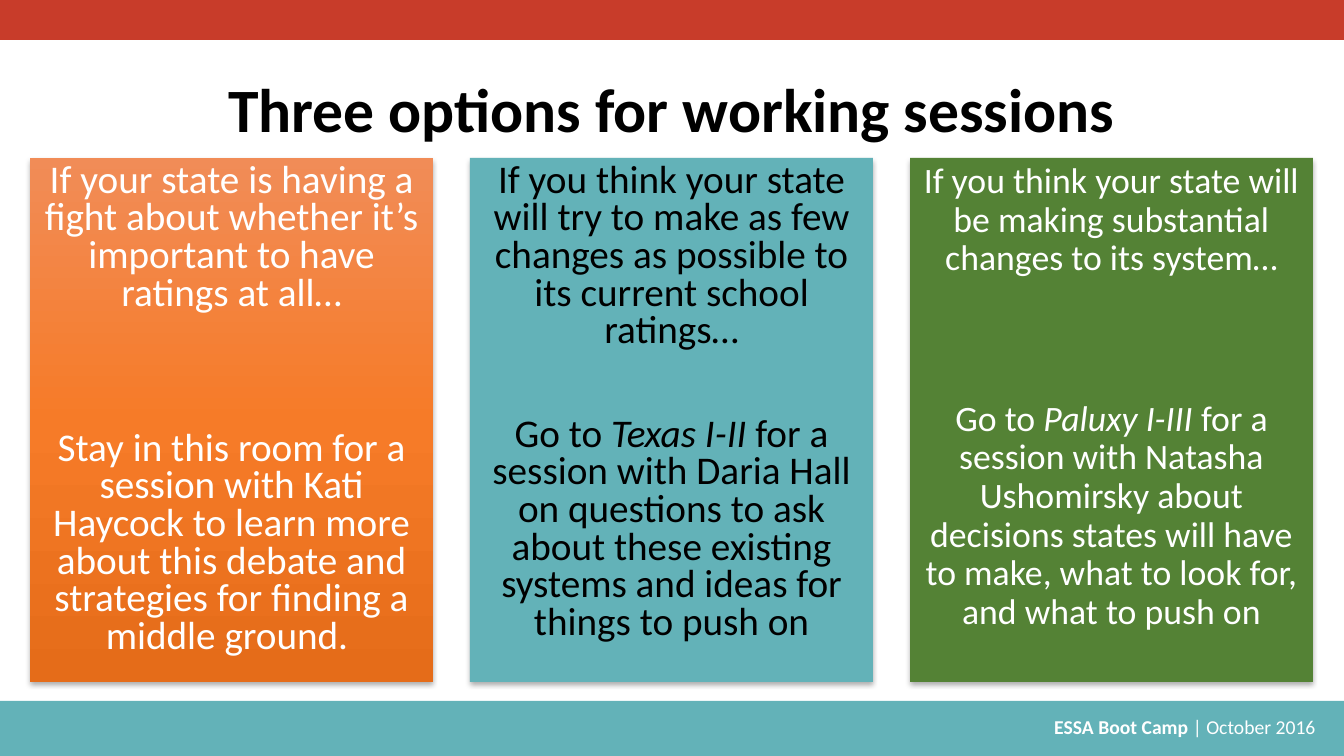
"""Build the slide that offers three options for working sessions."""
from copy import deepcopy

from pptx import Presentation, util as u
from pptx.dml.color import RGBColor
from pptx.enum import shapes, text
from pptx.oxml import parse_xml
from pptx.oxml.ns import nsdecls, qn

PX = 914400 / 100.8
WIDTH, HEIGHT = 1344, 756
WHITE, BLACK, TEAL, RED, GREEN = "FFFFFF", "000000", "63B2B8", "C83C2A", "548235"
ORANGES = [(0, "F18C57"), (0.5, "F67B28"), (1, "E56C19")]

TITLE = "Three options for working sessions"
FOOTER = [("ESSA Boot Camp ", "b"), ("| October 2016 ", "")]
OPTIONS = [
    dict(fill=ORANGES, color=WHITE, size=28, spacing=0.8, gap=84, paragraphs=[
        [("If your state is having a fight about whether it’s important to have "
          "ratings at all…", "")],
        [("Stay in this room for a session with Kati Haycock to learn more about "
          "this debate and strategies for finding a middle ground. ", "")]]),
    dict(fill=TEAL, color=BLACK, size=28, spacing=0.8, gap=47, paragraphs=[
        [("If you think your state will try to make as few changes as possible to "
          "its current school ratings…", "")],
        [("Go to ", ""), ("Texas I-II ", "i"),
         ("for a session with Daria Hall on questions to ask about these existing "
          "systems and ideas for things to push on", "")]]),
    dict(fill=GREEN, color=WHITE, size=25.5, spacing=0.9, gap=87, paragraphs=[
        [("If you think your state will be making substantial changes to its "
          "system…", "")],
        [("Go to ", ""), ("Paluxy I-III ", "i"),
         ("for a session with Natasha Ushomirsky about decisions states will have "
          "to make, what to look for, and what to push on", "")]]),
]
CARD_LEFT, CARD_TOP, CARD_WIDTH, CARD_HEIGHT, CARD_STEP = 30, 158, 403, 524, 440


def place(*lengths):
    return [round(length * PX) for length in lengths]


def rgb(value):
    return RGBColor.from_string(value)


def write(holder, paragraphs, size, color, align="CENTER", anchor="TOP",
          spacing=1.0, gap=0):
    frame = holder.text_frame
    frame.word_wrap = True
    frame.vertical_anchor = text.MSO_ANCHOR[anchor]
    for index, runs in enumerate(paragraphs):
        paragraph = frame.add_paragraph() if index else frame.paragraphs[0]
        paragraph.alignment = text.PP_ALIGN[align]
        paragraph.line_spacing = spacing
        paragraph.space_before = u.Pt(gap if index else 0)
        for words, style in runs:
            run = paragraph.add_run()
            run.text = words
            run.font.name = "Calibri"
            run.font.size = u.Pt(size)
            run.font.bold = style == "b"
            run.font.italic = style == "i"
            run.font.color.rgb = rgb(color)


def add_block(slide, box, fill):
    block = slide.shapes.add_shape(shapes.MSO_SHAPE.RECTANGLE, *place(*box))
    block.shadow.inherit = False
    block.line.fill.background()
    if isinstance(fill, str):
        block.fill.solid()
        block.fill.fore_color.rgb = rgb(fill)
        return block
    block.fill.gradient()
    block.fill.gradient_angle = 270
    stop_list = next(block.element.spPr.iter(qn("a:gsLst")))
    stop_list.append(deepcopy(stop_list[0]))
    for stop, (position, color) in zip(block.fill.gradient_stops, fill):
        stop.position = position
        stop.color.rgb = rgb(color)
    return block


def add_shadow(block):
    effects = block.element.spPr.find(qn("a:effectLst"))
    effects.append(parse_xml(
        f'<a:outerShdw {nsdecls("a")} blurRad="{u.Pt(3.5)}" dist="{u.Pt(2.2)}" '
        'dir="5400000" rotWithShape="0"><a:srgbClr val="000000">'
        '<a:alpha val="32000"/></a:srgbClr></a:outerShdw>'))


def main():
    deck = Presentation()
    deck.slide_width, deck.slide_height = place(WIDTH, HEIGHT)
    slide = deck.slides.add_slide(deck.slide_layouts[6])

    add_block(slide, (0, 701, WIDTH, 55), TEAL)
    add_block(slide, (0, 0, WIDTH, 40), RED)
    footer = slide.shapes.add_textbox(*place(484, 710, 846, 34))
    write(footer, [FOOTER], 14, WHITE, align="RIGHT")
    title = slide.shapes.add_textbox(*place(92, 40, 1160, 146))
    write(title, [[(TITLE, "b")]], 44, BLACK, anchor="MIDDLE", spacing=0.9)

    for index, option in enumerate(OPTIONS):
        left = CARD_LEFT + index * CARD_STEP
        card = add_block(slide, (left, CARD_TOP, CARD_WIDTH, CARD_HEIGHT), option["fill"])
        add_shadow(card)
        write(card, option["paragraphs"], option["size"], option["color"],
              spacing=option["spacing"], gap=option["gap"])

    deck.save("out.pptx")


if __name__ == "__main__":
    main()
